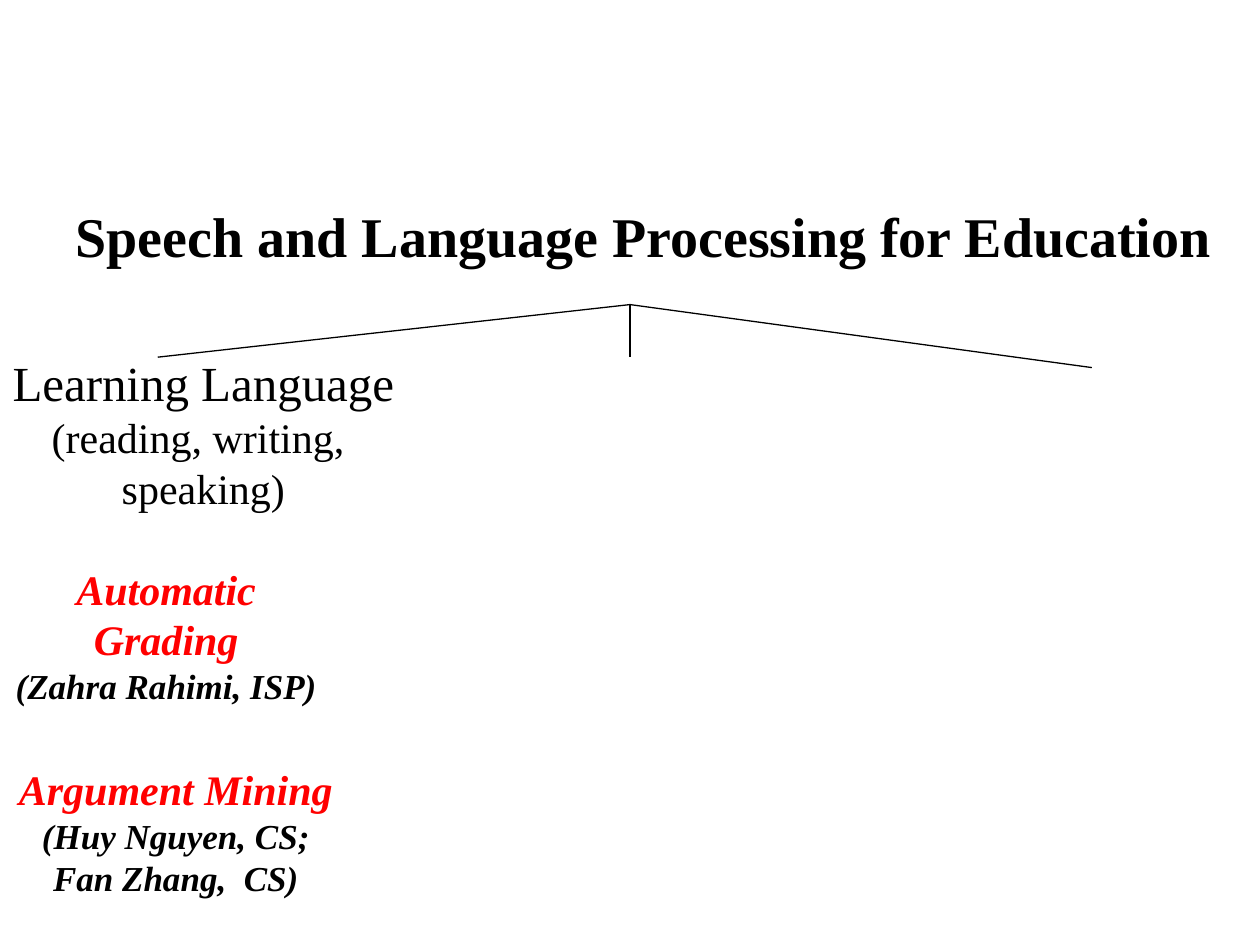
from lxml import etree
from pptx import Presentation
from pptx import util as u
from pptx.dml.color import RGBColor
from pptx.enum import shapes, text
from pptx.oxml.ns import qn

BLACK = RGBColor(0, 0, 0)
RED = RGBColor(255, 0, 0)
FONT = "Times New Roman"


def format_paragraph(paragraph, size, color=BLACK, bold=False, italic=False,
                     alignment=text.PP_ALIGN.CENTER):
    paragraph.alignment = alignment
    font = paragraph.font
    font.name, font.size, font.color.rgb = FONT, u.Pt(size), color
    font.bold, font.italic = bold, italic


def place(shape, left, top, width, height):
    shape.left, shape.top = u.Cm(left), u.Cm(top)
    shape.width, shape.height = u.Cm(width), u.Cm(height)


def add_title(slide, wording):
    title = slide.shapes.title
    place(title, 1.27, 3.94, 23.62, 1.63)
    frame = title.text_frame
    frame.text = wording
    frame.word_wrap = False
    frame.auto_size = text.MSO_AUTO_SIZE.SHAPE_TO_FIT_TEXT
    frame.vertical_anchor = text.MSO_ANCHOR.TOP
    format_paragraph(frame.paragraphs[0], 32, bold=True,
                     alignment=text.PP_ALIGN.LEFT)


def add_text(slide, box, lines, wrap=False, emphasis=False):
    """Add centred lines, each given as (wording, size, color)."""
    shape = slide.shapes.add_textbox(0, 0, 0, 0)
    place(shape, *box)
    frame = shape.text_frame
    frame.word_wrap = wrap
    frame.auto_size = text.MSO_AUTO_SIZE.SHAPE_TO_FIT_TEXT
    for index, (wording, size, color) in enumerate(lines):
        paragraph = frame.add_paragraph() if index else frame.paragraphs[0]
        paragraph.text = wording
        format_paragraph(paragraph, size, color, emphasis, emphasis)


def add_branch(slide, start, end):
    line = slide.shapes.add_connector(
        shapes.MSO_CONNECTOR.STRAIGHT, *map(u.Cm, start + end))
    line.line.color.rgb = BLACK
    line.line.width = u.Pt(0.75)
    etree.SubElement(line._element.spPr, qn("a:effectLst"))


def main():
    presentation = Presentation()
    presentation.slide_width, presentation.slide_height = u.Cm(25.4), u.Cm(19.05)
    slide = presentation.slides.add_slide(presentation.slide_layouts[5])

    add_title(slide, "Speech and Language Processing for Education")
    add_text(slide, (0, 6.99, 8.2, 4.5), [
        ("Learning Language", 28, BLACK),
        ("(reading, writing, ", 24, BLACK),
        ("speaking)", 24, BLACK),
    ])
    add_text(slide, (-0.08, 11.23, 6.86, 3.18), [
        ("Automatic", 24, RED),
        ("Grading", 24, RED),
        ("(Zahra Rahimi, ISP)", 20, BLACK),
    ], emphasis=True)
    for end in ((3.18, 7.2), (12.7, 7.2), (22.01, 7.41)):
        add_branch(slide, (12.7, 6.14), end)
    add_text(slide, (0, 15.27, 7.09, 3), [
        ("Argument Mining", 24, RED),
        ("(Huy Nguyen, CS; Fan Zhang,  CS)", 20, BLACK),
    ], wrap=True, emphasis=True)

    presentation.save("out.pptx")


if __name__ == "__main__":
    main()
